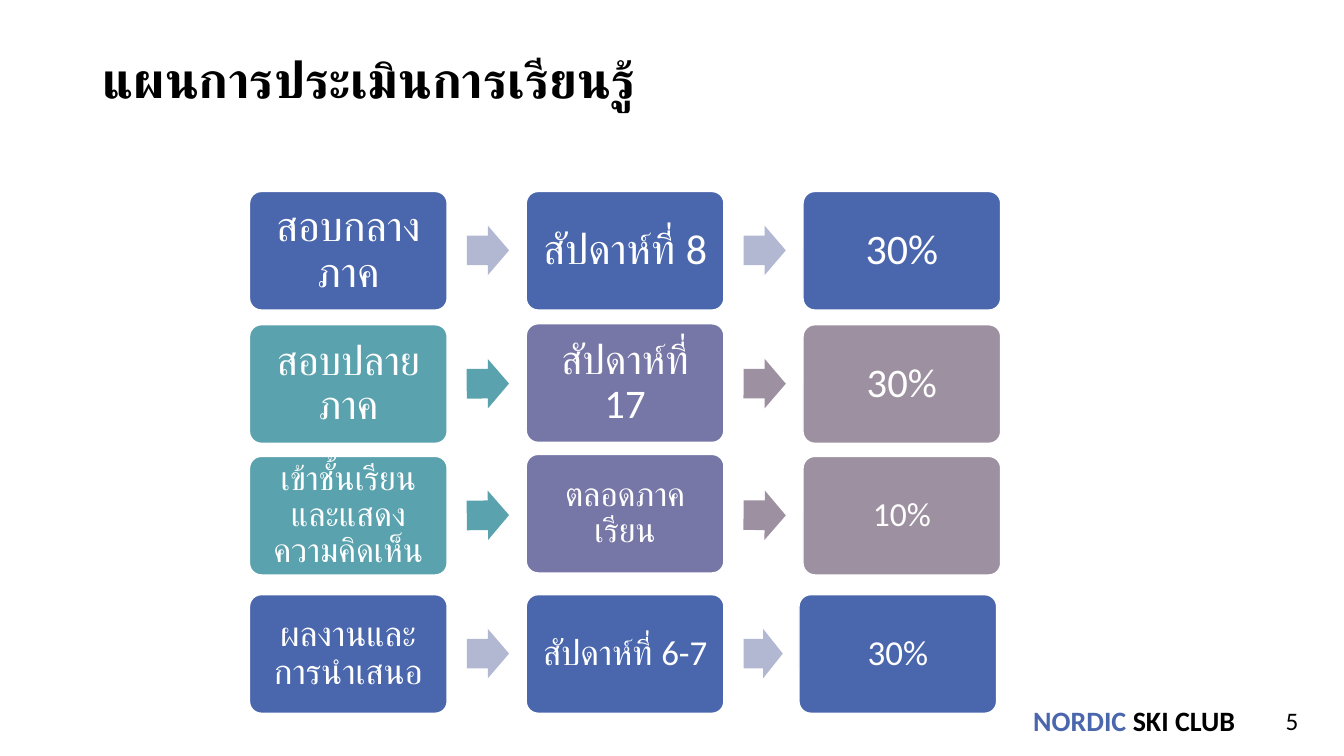
from dataclasses import dataclass

from pptx import Presentation
from pptx.dml.color import RGBColor
from pptx.enum.shapes import MSO_SHAPE as Preset
from pptx.enum.text import MSO_ANCHOR as Anchor, PP_ALIGN as Align
from pptx.util import Pt

COLOURS = {
    "black": "000000",
    "white": "FFFFFF",
    "blue": "4A66AC",
    "pale": "B2B8D2",
    "teal": "5AA2AE",
    "violet": "7677A6",
    "mauve": "9D90A0",
}
PLAIN = ("blue", "pale", "blue", "pale", "blue")
VARIED = ("teal", "teal", "violet", "mauve", "mauve")
FIRST_LEFT, COLUMN_PITCH = 178.2, 197.7
BOX_WIDTH, BOX_HEIGHT = 141.2, 84.7
ARROW_WIDTH, ARROW_HEIGHT = 30.2, 35.3
ARROW_OFFSET = 155.2


@dataclass
class Row:
    top: float
    texts: tuple
    size: int
    inset: float
    colours: tuple
    middle_shift: float = 0
    tilt: float = 0
    last_shift: float = 0


ROWS = (
    Row(136.8, ("สอบกลางภาค", "สัปดาห์ที่ 8", "30%"), 30, 8.6, PLAIN),
    Row(232, ("สอบปลายภาค", "สัปดาห์ที่ 17", "30%"), 29, 8.6, VARIED,
        middle_shift=-0.7, tilt=0.2),
    Row(326, ("เข้าชั้นเรียน และแสดงความคิดเห็น", "ตลอดภาคเรียน", "10%"), 24, 7.2,
        VARIED, middle_shift=-1.4, tilt=0.45),
    Row(424.8, ("ผลงานและการนำเสนอ", "สัปดาห์ที่ 6-7", "30%"), 25, 7.2, PLAIN,
        last_shift=-2.9),
)


def colour(name):
    return RGBColor.from_string(COLOURS[name])


def write_text(shape, runs, size, bold=False, align=Align.LEFT, anchor=Anchor.MIDDLE,
               insets=(7.2, 3.6), spacing=1.0, wrap=True):
    frame = shape.text_frame
    frame.word_wrap = wrap
    frame.vertical_anchor = anchor
    frame.margin_left = frame.margin_right = Pt(insets[0])
    frame.margin_top = frame.margin_bottom = Pt(insets[1])
    paragraph = frame.paragraphs[0]
    paragraph.alignment = align
    paragraph.line_spacing = spacing
    for text, colour_name in runs:
        run = paragraph.add_run()
        run.text = text
        run.font.name = "Calibri"
        run.font.size = Pt(size)
        run.font.bold = bold
        run.font.color.rgb = colour(colour_name)


def add_label(slide, left, top, width, height, runs, size, **text_format):
    box = slide.shapes.add_textbox(Pt(left), Pt(top), Pt(width), Pt(height))
    write_text(box, runs, size, **text_format)


def add_filled(slide, preset, left, top, width, height, fill, adjustments):
    shape = slide.shapes.add_shape(preset, Pt(left), Pt(top), Pt(width), Pt(height))
    shape.shadow.inherit = False
    shape.fill.solid()
    shape.fill.fore_color.rgb = colour(fill)
    for index, value in enumerate(adjustments):
        shape.adjustments[index] = value
    return shape


def add_box(slide, left, top, fill, text, row):
    box = add_filled(slide, Preset.ROUNDED_RECTANGLE, left, top,
                     BOX_WIDTH, BOX_HEIGHT, fill, (0.1,))
    box.line.color.rgb = colour("white")
    box.line.width = Pt(1)
    write_text(box, [(text, "white")], row.size, align=Align.CENTER,
               insets=(row.inset, row.inset), spacing=0.9)


def add_arrow(slide, left, top, width, fill, rotation):
    arrow = add_filled(slide, Preset.RIGHT_ARROW, left, top, width, ARROW_HEIGHT,
                       fill, (0.6, 0.5))
    arrow.line.fill.background()
    arrow.rotation = rotation


def add_row(slide, row):
    shifts = ((0, 0), (0, row.middle_shift), (row.last_shift, 0))
    for column, (text, (shift_x, shift_y)) in enumerate(zip(row.texts, shifts)):
        left = FIRST_LEFT + column * COLUMN_PITCH
        add_box(slide, left + shift_x, row.top + shift_y,
                row.colours[2 * column], text, row)
        if column < 2:
            next_shift = shifts[column + 1][0]
            add_arrow(slide, left + ARROW_OFFSET, row.top + 24.4,
                      ARROW_WIDTH + next_shift * 0.75, row.colours[2 * column + 1],
                      row.tilt if column else -row.tilt)


def main():
    presentation = Presentation()
    presentation.slide_width, presentation.slide_height = Pt(960), Pt(540)
    slide = presentation.slides.add_slide(presentation.slide_layouts[6])
    add_label(slide, 736.6, 501.1, 157, 27.4,
              [("NORDIC", "blue"), (" SKI CLUB", "black")], 20,
              bold=True, insets=(1.4, 1.4), spacing=None, wrap=False)
    add_label(slide, 66.2, 33.8, 828, 50.4, [("แผนการประเมินการเรียนรู้", "black")], 36,
              bold=True, spacing=0.9)
    add_label(slide, 894.2, 500.4, 40.3, 28.8, [("5", "black")], 18,
              align=Align.RIGHT, anchor=Anchor.TOP)
    for row in ROWS:
        add_row(slide, row)
    presentation.save("out.pptx")


if __name__ == "__main__":
    main()
